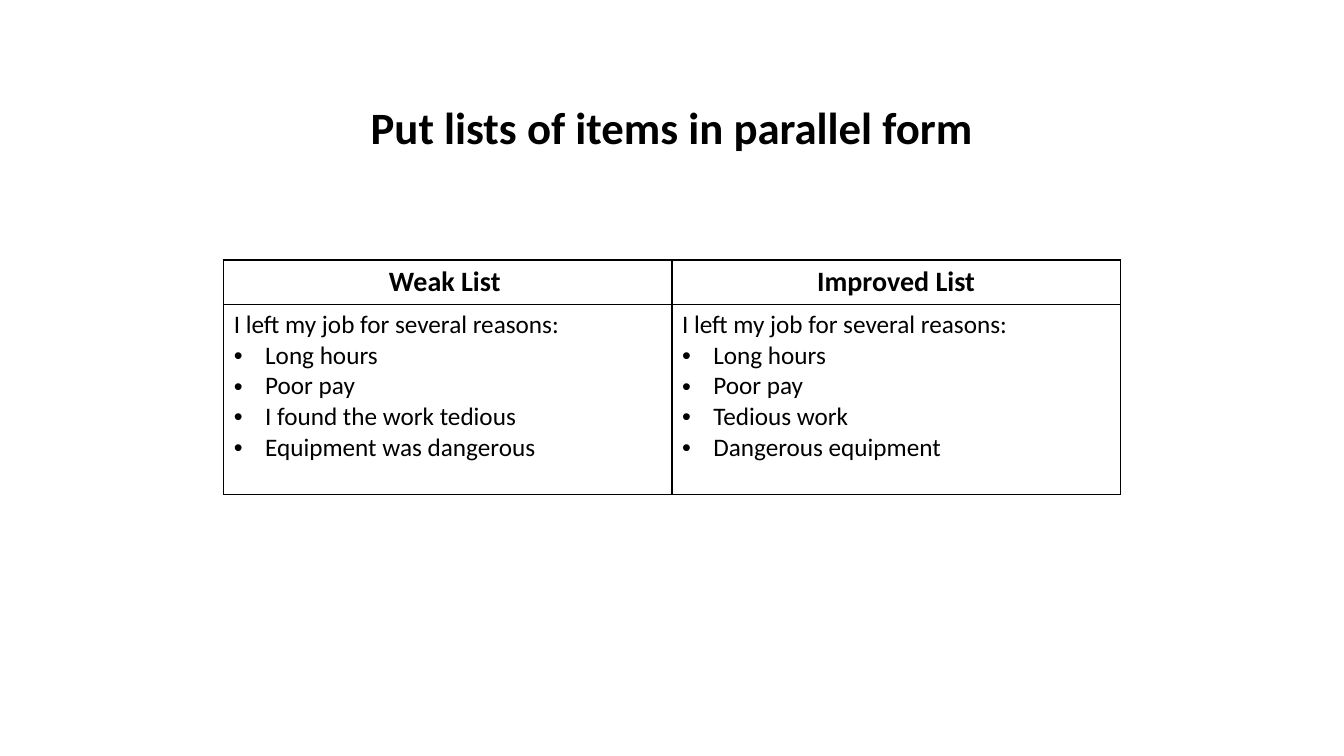
import lxml.etree
import pptx
import pptx.dml.color
import pptx.enum.text
import pptx.oxml
import pptx.oxml.ns
import pptx.util

Inches = pptx.util.Inches
ALIGN = pptx.enum.text.PP_ALIGN

# Content
TITLE = "Put lists of items in parallel form"
INTRO = "I left my job for several reasons:"
LISTS = [
    ("Weak List ", ["Long hours", "Poor pay", "I found the work tedious", "Equipment was dangerous"]),
    ("Improved List", ["Long hours", "Poor pay", "Tedious work", "Dangerous equipment"]),
]

# Formats
INK = "000000"
TITLE_FONT = {"name": "Calibri", "size": pptx.util.Pt(32), "bold": True}
HEADER_FONT = {"name": "Calibri", "size": pptx.util.Pt(20), "bold": True}
BODY_FONT = {"name": "Calibri", "size": pptx.util.Pt(18), "bold": False}
TABLE_LEFT, TABLE_TOP, COLUMN_WIDTH = 2.22, 2.58, 4.445
ROW_HEIGHTS = [0.44, 1.89]
BULLET_INDENT = Inches(0.31)


def color(value):
    return pptx.dml.color.RGBColor.from_string(value)


def write(para, text, font, align=ALIGN.LEFT):
    para.alignment = align
    span = para.add_run()
    span.text = text
    for name, value in font.items():
        setattr(span.font, name, value)
    span.font.color.rgb = color(INK)


def add_bullet(para):
    properties = para._p.get_or_add_pPr()
    properties.set("marL", str(BULLET_INDENT))
    properties.set("indent", str(-BULLET_INDENT))
    namespace = pptx.oxml.ns.qn
    lxml.etree.SubElement(properties, namespace("a:buFont")).set("typeface", "Arial")
    lxml.etree.SubElement(properties, namespace("a:buChar")).set("char", "•")


def outline(cell):
    cell.fill.background()
    properties = cell._tc.get_or_add_tcPr()
    for position, side in enumerate(["lnL", "lnR", "lnT", "lnB"]):
        line = pptx.oxml.parse_xml(
            f'<a:{side} {pptx.oxml.ns.nsdecls("a")} w="{pptx.util.Pt(1)}">'
            f'<a:solidFill><a:srgbClr val="{INK}"/></a:solidFill></a:{side}>')
        properties.insert(position, line)


# Slide
deck = pptx.Presentation()
deck.slide_width, deck.slide_height = Inches(13.33), Inches(7.5)
page = deck.slides.add_slide(deck.slide_layouts[5])

# Title
title = page.shapes.title
title.left, title.top, title.width, title.height = map(Inches, (3.33, 0.94, 6.67, 0.64))
frame = title.text_frame
frame.auto_size = pptx.enum.text.MSO_AUTO_SIZE.SHAPE_TO_FIT_TEXT
frame.vertical_anchor = pptx.enum.text.MSO_ANCHOR.TOP
write(frame.paragraphs[0], TITLE, TITLE_FONT, ALIGN.CENTER)

# Comparison table
table = page.shapes.add_table(
    len(ROW_HEIGHTS), len(LISTS), Inches(TABLE_LEFT), Inches(TABLE_TOP),
    Inches(COLUMN_WIDTH * len(LISTS)), Inches(sum(ROW_HEIGHTS))).table
table.horz_banding = False
for row, height in zip(table.rows, ROW_HEIGHTS):
    row.height = Inches(height)

for index, (heading, reasons) in enumerate(LISTS):
    table.columns[index].width = Inches(COLUMN_WIDTH)
    header, body = table.cell(0, index), table.cell(1, index)
    outline(header)
    outline(body)
    write(header.text_frame.paragraphs[0], heading, HEADER_FONT, ALIGN.CENTER)
    write(body.text_frame.paragraphs[0], INTRO, BODY_FONT)
    for reason in reasons:
        para = body.text_frame.add_paragraph()
        write(para, reason, BODY_FONT)
        add_bullet(para)

deck.save("out.pptx")
